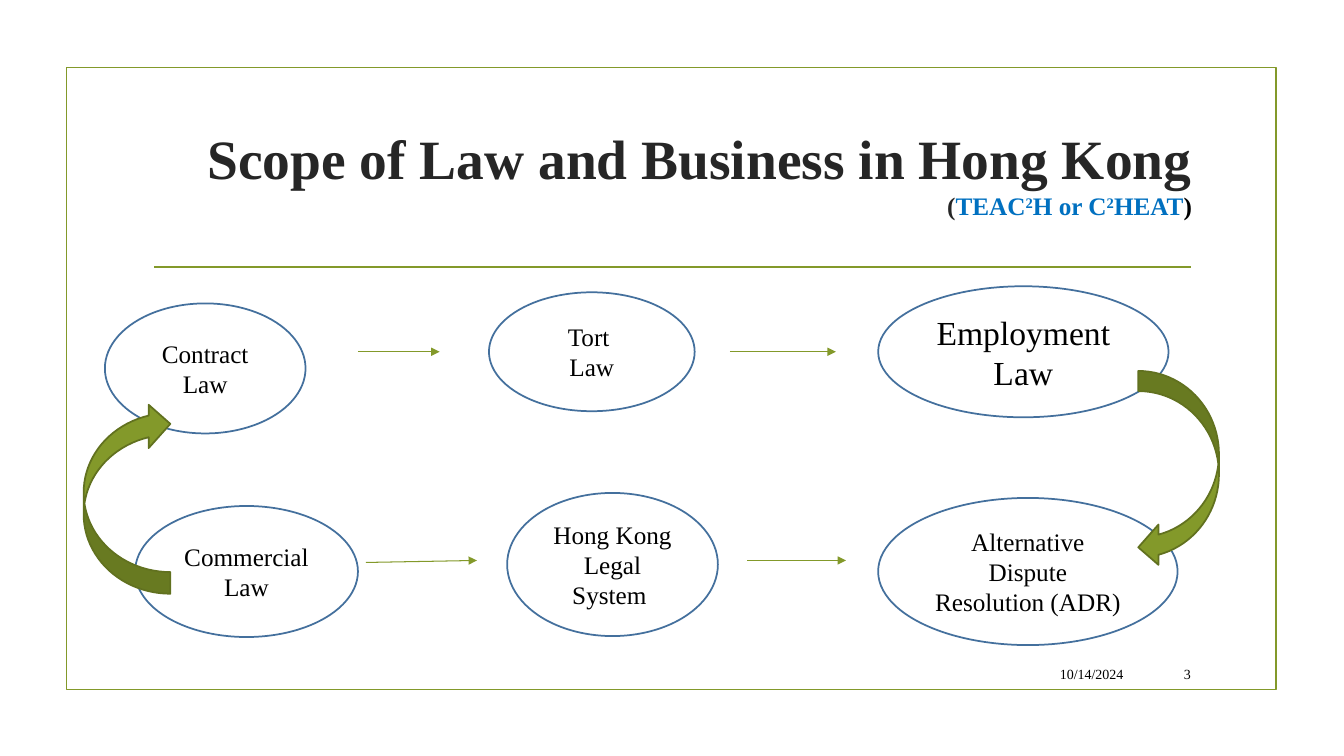
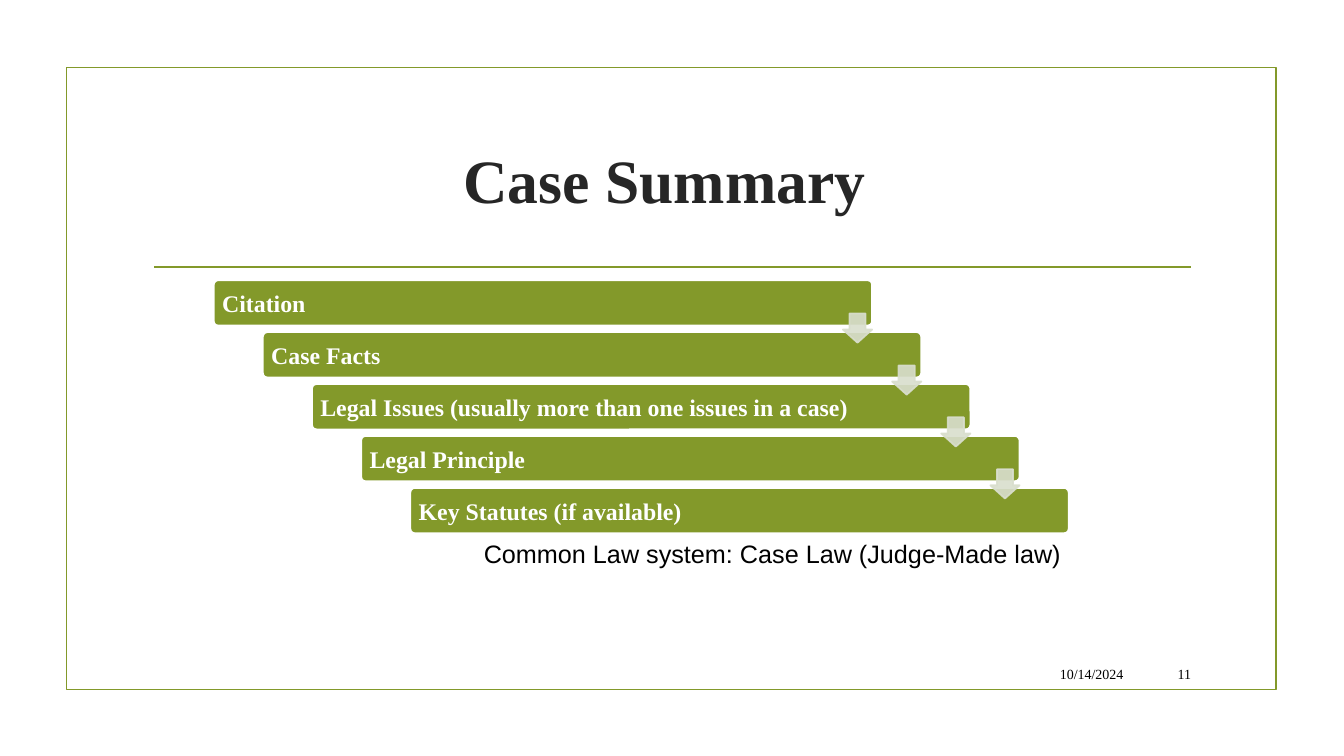
"""Build two slides on Hong Kong business law: its scope and the parts of a case summary."""
from lxml import etree
from pptx import Presentation
from pptx.dml.color import RGBColor
from pptx.enum import shapes, text
from pptx.oxml.ns import qn
from pptx.util import Inches, Pt

GREEN = RGBColor(0x83, 0x99, 0x2A)
DARK_GREEN = RGBColor(0x61, 0x71, 0x1F)
PALE_GREEN = RGBColor(0xD9, 0xDE, 0xCD)
OUTLINE = RGBColor(0x44, 0x70, 0x9D)
BLUE = RGBColor(0x00, 0x70, 0xC0)
TITLE = RGBColor(0x26, 0x26, 0x26)
BLACK = RGBColor(0, 0, 0)
WHITE = RGBColor(255, 255, 255)
SERIF = "Times New Roman"
SHAPE = shapes.MSO_SHAPE
ALIGN = text.PP_ALIGN


def write(sp, lines, size=18, color=BLACK, bold=False, font=SERIF, align=ALIGN.CENTER,
          anchor=text.MSO_ANCHOR.MIDDLE):
    """Fill sp with lines; a line is a string or a list of (text, size, color, baseline) runs."""
    tf = sp.text_frame
    tf.word_wrap = True
    tf.vertical_anchor = anchor
    for i, line in enumerate(lines):
        p = tf.add_paragraph() if i else tf.paragraphs[0]
        p.alignment = align
        runs = [(line, size, color, 0)] if isinstance(line, str) else line
        for words, run_size, run_color, baseline in runs:
            r = p.add_run()
            r.text = words
            r.font.name, r.font.bold, r.font.size = font, bold, Pt(run_size)
            r.font.color.rgb = run_color
            if baseline:
                r._r.get_or_add_rPr().set("baseline", str(baseline * 1000))


def draw(s, kind, box, line, fill=None, width=1.25):
    """Add a preset shape, a connector when kind is None, and return it."""
    box = [Inches(v) for v in box]
    if kind is None:
        sp = s.shapes.add_connector(shapes.MSO_CONNECTOR.STRAIGHT, *box)
        etree.SubElement(sp._element.spPr, qn("a:effectLst"))
    else:
        sp = s.shapes.add_shape(kind, *box)
        sp.shadow.inherit = False
        if fill is None:
            sp.fill.background()
        else:
            sp.fill.solid()
            sp.fill.fore_color.rgb = fill
    sp.line.color.rgb = line
    sp.line.width = Pt(width)
    return sp


prs = Presentation()
prs.slide_width, prs.slide_height = Inches(13.33), Inches(7.5)

scope_title = [
    [("Scope of Law and Business in Hong Kong", 39.6, TITLE, 0)],
    [("(", 18, TITLE, 0), ("TEAC", 18, BLUE, 0), ("2", 18, BLUE, 30), ("H or C", 18, BLUE, 0),
     ("2", 18, BLUE, 30), ("HEAT", 18, BLUE, 0), (")", 18, BLACK, 0)],
]
pages = [
    (scope_title, (1.42, 0.8, 10.5, 1.82), ALIGN.RIGHT, "3"),
    (["Case Summary "], (1.42, 1.12, 10.5, 1.31), ALIGN.CENTER, "11"),
]
for title, box, align, number in pages:
    s = prs.slides.add_slide(prs.slide_layouts[6])
    draw(s, SHAPE.RECTANGLE, (0.66, 0.67, 12, 6.17), GREEN)
    draw(s, None, (1.53, 2.65, 11.81, 2.65), GREEN)
    tb = s.shapes.add_textbox(*[Inches(v) for v in box])
    write(tb, title, size=44, color=TITLE, bold=True, align=align)
    for left, width, words in [(9.49, 1.75, "10/14/2024"), (11.32, 0.59, number)]:
        tb = s.shapes.add_textbox(Inches(left), Inches(6.53), Inches(width), Inches(0.31))
        write(tb, [words], size=10, align=ALIGN.RIGHT)
scope, case = prs.slides

topics = [
    (["Contract Law"], 18, (1.04, 3.01, 1.99, 1.29)),
    (["Tort ", "Law"], 18, (4.85, 2.9, 2.04, 1.18)),
    (["Employment Law"], 24, (8.71, 2.84, 2.88, 1.3)),
    (["Hong Kong Legal System "], 18, (5.03, 4.89, 2.09, 1.42)),
    (["Alternative Dispute Resolution (ADR)"], 18, (8.71, 4.94, 2.97, 1.46)),
    (["Commercial Law"], 18, (1.34, 5.02, 2.21, 1.3)),
]
for lines, size, box in topics:
    write(draw(scope, SHAPE.OVAL, box, OUTLINE, WHITE), lines, size=size)

for ends in [(3.55, 3.49, 4.36, 3.49), (7.24, 3.49, 8.29, 3.49),
             (3.63, 5.58, 4.73, 5.56), (7.41, 5.56, 8.39, 5.56)]:
    arrow = draw(scope, None, ends, GREEN, width=0.75)
    etree.SubElement(arrow.line._get_or_add_ln(), qn("a:tailEnd"), type="triangle")

draw(scope, SHAPE.CURVED_LEFT_ARROW, (11.29, 3.68, 0.8, 1.95), DARK_GREEN, GREEN)
up = draw(scope, SHAPE.CURVED_DOWN_ARROW, (0.31, 4.51, 1.9, 0.86), DARK_GREEN, GREEN)
up.rotation = 270

steps = ["Citation", "Case Facts", "Legal Issues (usually more than one issues in a case)",
         "Legal Principle", "Key Statutes (if available)"]
gaps = len(steps) - 1
offsets = [(1.95 * i / gaps, 2.06 * i / gaps) for i in range(len(steps))]
for step, (dx, dy) in zip(steps, offsets):
    bar = draw(case, SHAPE.ROUNDED_RECTANGLE, (2.12 + dx, 2.78 + dy, 6.53, 0.45), WHITE, GREEN)
    bar.adjustments[0] = 0.1
    bar.text_frame.margin_left = Inches(0.07)
    write(bar, [step], size=17, color=WHITE, bold=True, align=ALIGN.LEFT)
for dx, dy in offsets[:-1]:
    arrow = draw(case, SHAPE.DOWN_ARROW, (8.36 + dx, 3.11 + dy, 0.29, 0.29), PALE_GREEN, PALE_GREEN)
    arrow.adjustments[0], arrow.adjustments[1] = 0.55, 0.45
    for color in arrow._element.spPr.iter(qn("a:srgbClr")):
        etree.SubElement(color, qn("a:alpha"), val="90000")

tb = case.shapes.add_textbox(Inches(4.7), Inches(5.29), Inches(6.3), Inches(0.4))
write(tb, ["Common Law system: Case Law (Judge-Made law)"], font="Arial", align=ALIGN.LEFT,
      anchor=text.MSO_ANCHOR.TOP)

prs.save("out.pptx")
